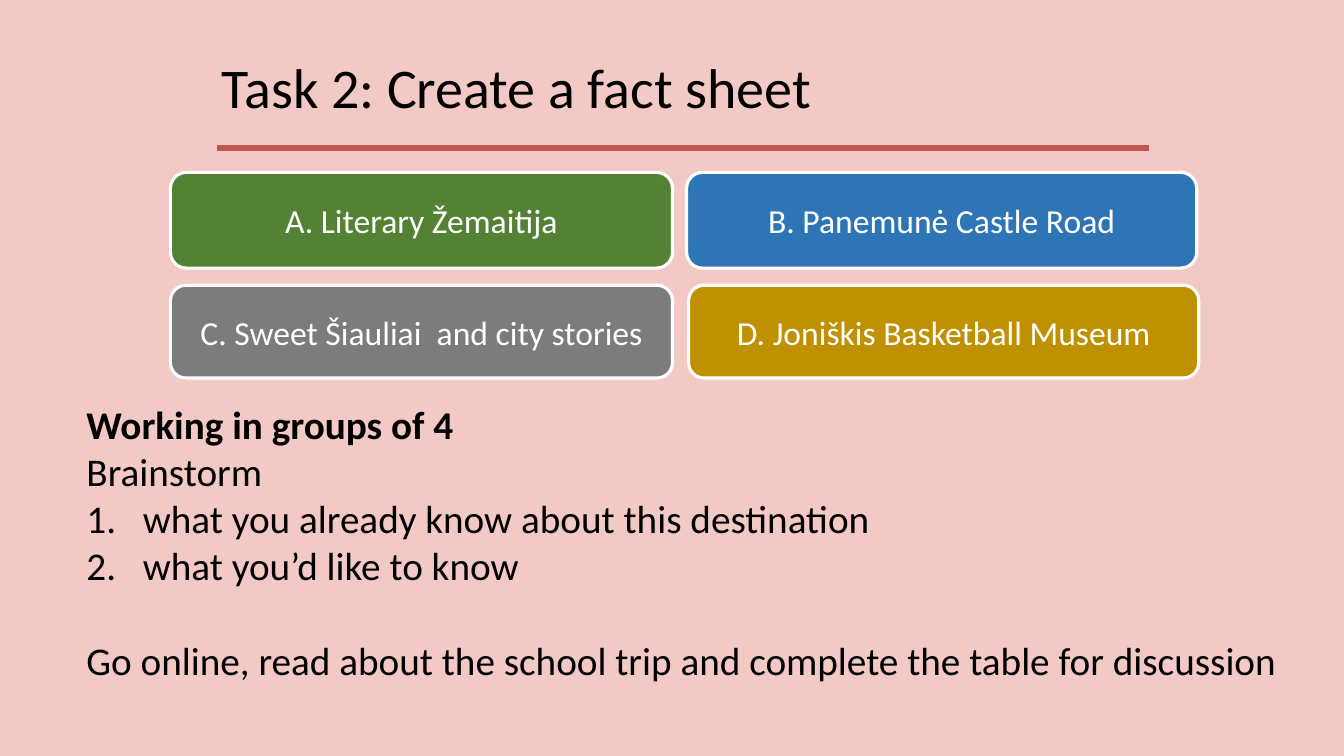
from dataclasses import dataclass

from lxml import etree
from pptx import Presentation
from pptx import util as u
from pptx.dml.color import RGBColor
from pptx.enum import shapes, text
from pptx.oxml import ns

PINK = RGBColor(0xF3, 0xC9, 0xC5)
RED = RGBColor(0xBF, 0x57, 0x4F)
BLACK = RGBColor(0, 0, 0)
WHITE = RGBColor(0xFF, 0xFF, 0xFF)
GREEN = RGBColor(0x54, 0x82, 0x35)
BLUE = RGBColor(0x2E, 0x75, 0xB6)
GREY = RGBColor(0x7C, 0x7C, 0x7C)
GOLD = RGBColor(0xBF, 0x90, 0x00)

FONT = "Calibri"
LIST_INDENT = u.Inches(0.56)


@dataclass
class Destination:
    label: str
    color: RGBColor
    left: float
    top: float
    width: float
    height: float


@dataclass
class Instruction:
    wording: str
    bold: bool = False
    numbered: bool = False
    space_before: float = 0


DESTINATIONS = [
    Destination("A. Literary Žemaitija", GREEN, 1.69, 1.71, 4.98, 0.95),
    Destination("B. Panemunė Castle Road", BLUE, 6.81, 1.71, 5.06, 0.95),
    Destination("C. Sweet Šiauliai  and city stories", GREY, 1.69, 2.83, 4.98, 0.92),
    Destination("D. Joniškis Basketball Museum", GOLD, 6.83, 2.83, 5.06, 0.92),
]

INSTRUCTIONS = [
    Instruction("Working in groups of 4", bold=True),
    Instruction("Brainstorm"),
    Instruction("what you already know about this destination", numbered=True),
    Instruction("what you’d like to know", numbered=True),
    Instruction("Go online, read about the school trip and complete the table for discussion",
                space_before=34),
]


def write(paragraph, wording: str, *, size: float, color: RGBColor = BLACK,
          bold: bool = False, align=text.PP_ALIGN.LEFT,
          line_spacing: float = 1.0, space_before: float = 0) -> None:
    paragraph.alignment = align
    paragraph.line_spacing = line_spacing
    paragraph.space_before = u.Pt(space_before)
    run = paragraph.add_run()
    run.text = wording
    run.font.name = FONT
    run.font.size = u.Pt(size)
    run.font.bold = bold
    run.font.color.rgb = color


def number(paragraph) -> None:
    """Turn the paragraph into an item of a 1. 2. 3. list."""
    properties = paragraph._p.get_or_add_pPr()
    properties.set("marL", str(LIST_INDENT))
    properties.set("indent", str(-LIST_INDENT))
    etree.SubElement(properties, ns.qn("a:buFont"), typeface="+mj-lt")
    etree.SubElement(properties, ns.qn("a:buAutoNum"), type="arabicPeriod")


def add_text_frame(slide, left: float, top: float, width: float, height: float, anchor):
    box = slide.shapes.add_textbox(u.Inches(left), u.Inches(top),
                                   u.Inches(width), u.Inches(height))
    frame = box.text_frame
    frame.word_wrap = True
    frame.vertical_anchor = anchor
    return frame


def add_heading(slide) -> None:
    rule = slide.shapes.add_connector(shapes.MSO_CONNECTOR.STRAIGHT,
                                      u.Inches(2.15), u.Inches(1.47),
                                      u.Inches(11.4), u.Inches(1.47))
    rule.line.color.rgb = RED
    rule.line.width = u.Pt(4.5)
    etree.SubElement(rule._element.spPr, ns.qn("a:effectLst"))
    title = add_text_frame(slide, 2.1, 0.17, 11.06, 1.45, text.MSO_ANCHOR.MIDDLE)
    write(title.paragraphs[0], "Task 2: Create a fact sheet", size=40, line_spacing=0.9)


def add_instructions(slide) -> None:
    frame = add_text_frame(slide, 0.76, 3.92, 12.14, 3.41, text.MSO_ANCHOR.TOP)
    for index, item in enumerate(INSTRUCTIONS):
        paragraph = frame.add_paragraph() if index else frame.paragraphs[0]
        if item.numbered:
            number(paragraph)
        write(paragraph, item.wording, size=28, bold=item.bold,
              space_before=item.space_before)


def add_destination(slide, place: Destination) -> None:
    card = slide.shapes.add_shape(shapes.MSO_SHAPE.ROUNDED_RECTANGLE,
                                  u.Inches(place.left), u.Inches(place.top),
                                  u.Inches(place.width), u.Inches(place.height))
    card.shadow.inherit = False
    card.fill.solid()
    card.fill.fore_color.rgb = place.color
    card.line.color.rgb = WHITE
    card.line.width = u.Pt(2.25)
    card.text_frame.word_wrap = True
    card.text_frame.vertical_anchor = text.MSO_ANCHOR.MIDDLE
    write(card.text_frame.paragraphs[0], place.label, size=24, color=WHITE,
          align=text.PP_ALIGN.CENTER)


def main() -> None:
    deck = Presentation()
    deck.slide_width = u.Inches(13.33)
    deck.slide_height = u.Inches(7.5)
    slide = deck.slides.add_slide(deck.slide_layouts[6])
    slide.background.fill.solid()
    slide.background.fill.fore_color.rgb = PINK
    add_heading(slide)
    add_instructions(slide)
    for place in DESTINATIONS:
        add_destination(slide, place)
    deck.save("out.pptx")


if __name__ == "__main__":
    main()
